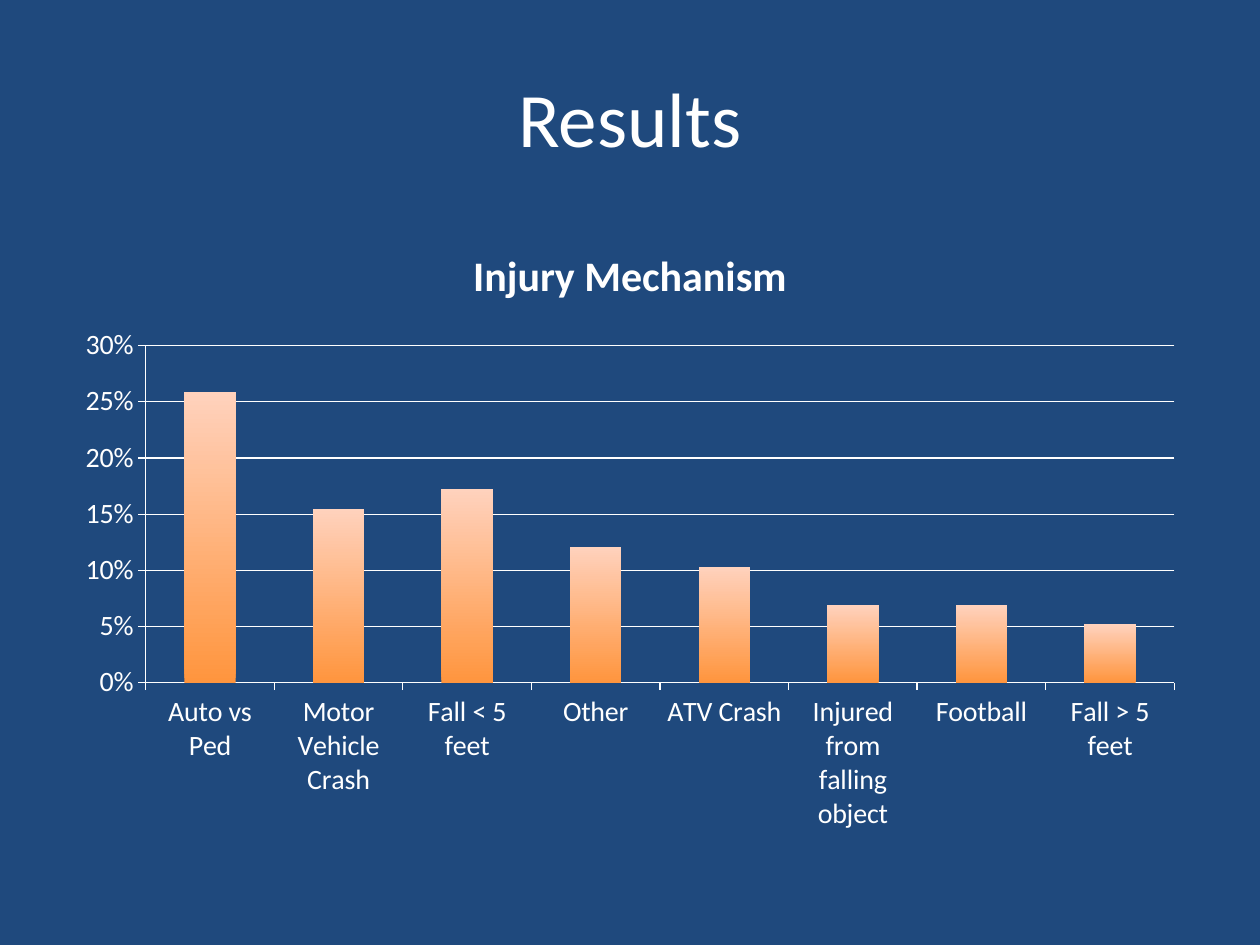
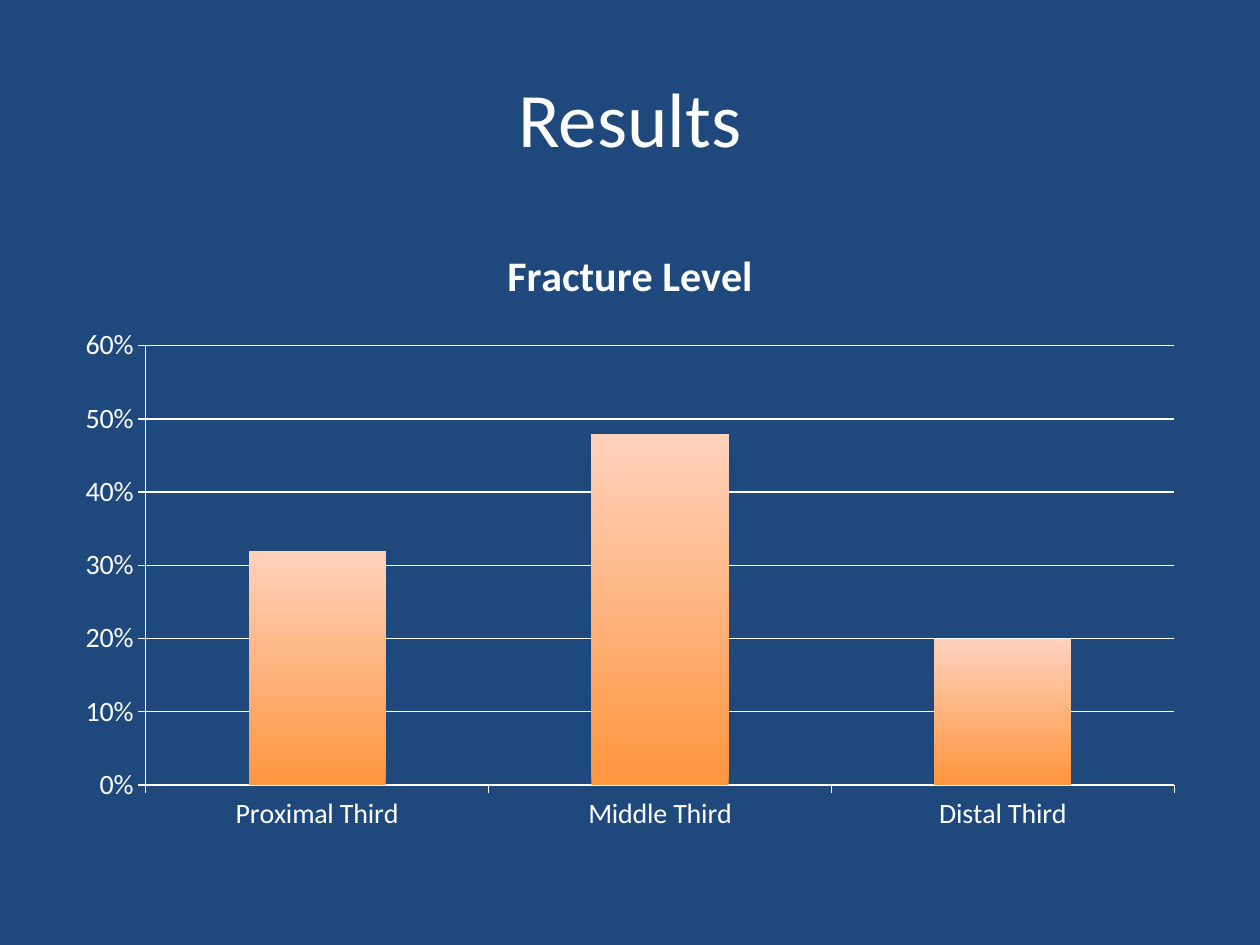
from pptx import Presentation
from pptx.chart.data import CategoryChartData
from pptx.dml.color import RGBColor
from pptx.enum import chart as charts, text
from pptx.util import Pt

PX = 9144  # EMU per px, 100 px to the inch
NAVY = RGBColor(0x1F, 0x49, 0x7D)
WHITE = RGBColor(0xFF, 0xFF, 0xFF)
ORANGE = RGBColor(0xFF, 0x95, 0x3E)
PEACH = RGBColor(0xFF, 0xD2, 0xBD)
FONT = "Calibri"

SLIDE_SIZE = (1000, 750)
TITLE_BOX = (50, 30, 900, 125)
CHART_BOX = (50, 175, 900, 495)

RESULTS = {
    "Injury Mechanism": {
        "Auto vs Ped": 0.259,
        "Motor Vehicle Crash": 0.155,
        "Fall < 5 feet": 0.172,
        "Other": 0.121,
        "ATV Crash": 0.103,
        "Injured from falling object": 0.069,
        "Football": 0.069,
        "Fall > 5 feet": 0.052,
    },
    "Fracture Level": {
        "Proximal Third": 0.32,
        "Middle Third": 0.48,
        "Distal Third": 0.2,
    },
}


def scale(box):
    return [length * PX for length in box]


def style_font(font, size, bold=False):
    font.name = FONT
    font.size = Pt(size)
    font.bold = bold
    font.color.rgb = WHITE


def set_title(slide, box, wording):
    title = slide.shapes.title
    title.left, title.top, title.width, title.height = scale(box)
    frame = title.text_frame
    frame.vertical_anchor = text.MSO_ANCHOR.MIDDLE
    paragraph = frame.paragraphs[0]
    paragraph.alignment = text.PP_ALIGN.CENTER
    run = paragraph.add_run()
    run.text = wording
    style_font(run.font, 44)


def style_axis(axis):
    style_font(axis.tick_labels.font, 16)
    axis.major_tick_mark = charts.XL_TICK_MARK.OUTSIDE
    axis.minor_tick_mark = charts.XL_TICK_MARK.NONE
    set_line(axis.format.line)


def set_line(line):
    line.color.rgb = WHITE
    line.width = Pt(0.75)


def fill_bars(series):
    """Fade the bars from orange at the foot to peach at the top."""
    series.invert_if_negative = False
    fill = series.format.fill
    fill.gradient()
    fill.gradient_angle = 90
    for stop, color in zip(fill.gradient_stops, (ORANGE, PEACH)):
        stop.color.rgb = color


def add_percentage_chart(slide, box, heading, shares):
    data = CategoryChartData(number_format="0%")
    data.categories = list(shares)
    data.add_series("Series 1", list(shares.values()))
    chart = slide.shapes.add_chart(
        charts.XL_CHART_TYPE.COLUMN_CLUSTERED, *scale(box), data).chart
    style_font(chart.font, 10)
    chart.has_legend = False

    chart.has_title = True
    chart.chart_title.include_in_layout = False
    run = chart.chart_title.text_frame.paragraphs[0].add_run()
    run.text = heading
    style_font(run.font, 24, bold=True)

    style_axis(chart.category_axis)
    value_axis = chart.value_axis
    style_axis(value_axis)
    value_axis.tick_labels.number_format = "0%"
    value_axis.tick_labels.number_format_is_linked = False
    value_axis.has_major_gridlines = True
    set_line(value_axis.major_gridlines.format.line)

    plot = chart.plots[0]
    plot.gap_width = 150
    plot.vary_by_categories = False
    fill_bars(plot.series[0])


def add_results_slide(presentation, heading, shares):
    slide = presentation.slides.add_slide(presentation.slide_layouts[5])
    background = slide.background.fill
    background.solid()
    background.fore_color.rgb = NAVY
    set_title(slide, TITLE_BOX, "Results")
    add_percentage_chart(slide, CHART_BOX, heading, shares)


def main():
    presentation = Presentation()
    presentation.slide_width, presentation.slide_height = scale(SLIDE_SIZE)
    for heading, shares in RESULTS.items():
        add_results_slide(presentation, heading, shares)
    presentation.save("out.pptx")


if __name__ == "__main__":
    main()
